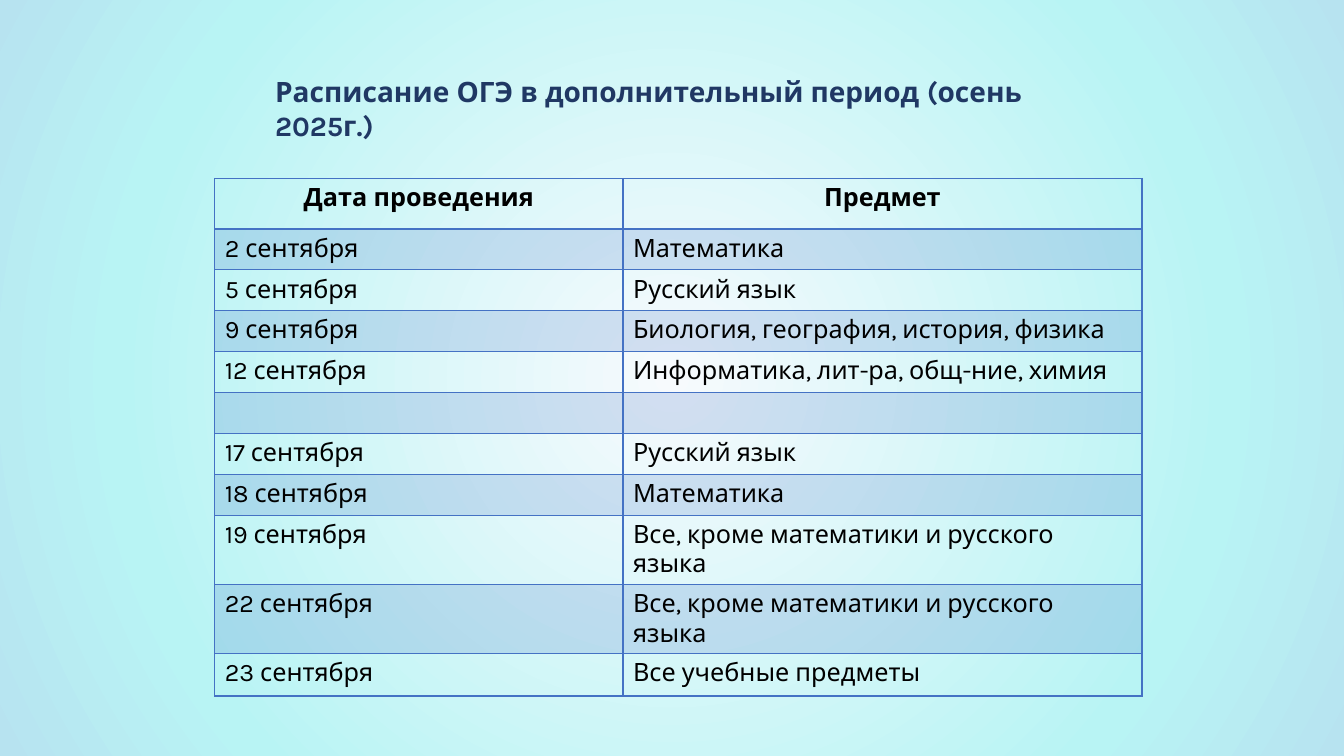
from lxml import etree
from pptx import Presentation
from pptx import util as u
from pptx.dml.color import RGBColor
from pptx.enum import text
from pptx.oxml import parse_xml
from pptx.oxml.ns import nsdecls, qn

NAVY = RGBColor(0x20, 0x38, 0x64)
BLUE = RGBColor(0x44, 0x72, 0xC4)
BLACK = RGBColor(0, 0, 0)
BACKGROUND_STOPS = [
    (0, RGBColor(0xF7, 0xFA, 0xFD)),
    (72, RGBColor(0xB8, 0xF4, 0xF4)),
    (100, RGBColor(0xB7, 0xE3, 0xF0)),
]

TITLE = "Расписание ОГЭ в дополнительный период (осень 2025г.)"
HEADER = ("Дата проведения", "Предмет")
EXAMS = [
    ("2 сентября", "Математика"),
    ("5 сентября", "Русский язык"),
    ("9 сентября", "Биология, география, история, физика"),
    ("12 сентября", "Информатика, лит-ра, общ-ние, химия"),
    ("", ""),
    ("17 сентября", "Русский язык"),
    ("18 сентября", "Математика"),
    ("19 сентября", "Все, кроме математики и русского языка"),
    ("22 сентября", "Все, кроме математики и русского языка"),
    ("23 сентября", "Все учебные предметы"),
]
COLUMN_WIDTHS = [10.29, 13.08]
ROW_HEIGHTS = [1.27] + [1.03] * 8 + [1.17, 1.07]


class ScheduleSlide:
    font_name = "Karla"

    def __init__(self, presentation):
        self.slide = presentation.slides.add_slide(presentation.slide_layouts[5])

    def background(self, stops):
        stop_xml = "".join(
            f'<a:gs pos="{position * 1000}"><a:srgbClr val="{color}"/></a:gs>'
            for position, color in stops
        )
        self.slide.element.cSld.insert(0, parse_xml(
            f'<p:bg {nsdecls("p", "a")}><p:bgPr><a:gradFill rotWithShape="1">'
            f'<a:gsLst>{stop_xml}</a:gsLst><a:path path="circle">'
            '<a:fillToRect l="50000" t="50000" r="50000" b="50000"/></a:path>'
            '</a:gradFill><a:effectLst/></p:bgPr></p:bg>'
        ))

    def format_paragraph(self, paragraph, size, color, bold, alignment):
        paragraph.alignment = alignment
        font = paragraph.font
        font.name, font.size, font.bold = self.font_name, u.Pt(size), bold
        font.color.rgb = color

    def title(self, words, left, top, width, height):
        shape = self.slide.shapes.title
        shape.left, shape.top = u.Cm(left), u.Cm(top)
        shape.width, shape.height = u.Cm(width), u.Cm(height)
        frame = shape.text_frame
        frame.text = words
        frame.word_wrap = True
        frame.auto_size = text.MSO_AUTO_SIZE.NONE
        frame.vertical_anchor = text.MSO_ANCHOR.TOP
        self.format_paragraph(frame.paragraphs[0], 20, NAVY, True, text.PP_ALIGN.LEFT)

    def border(self, cell, bottom_width):
        properties = cell._tc.get_or_add_tcPr()
        widths = {"lnL": 1, "lnR": 1, "lnT": 1, "lnB": bottom_width}
        for index, (side, width) in enumerate(widths.items()):
            properties.insert(index, parse_xml(
                f'<a:{side} {nsdecls("a")} w="{u.Pt(width)}"><a:solidFill>'
                f'<a:srgbClr val="{BLUE}"/></a:solidFill></a:{side}>'
            ))

    def shade(self, cell, opacity):
        cell.fill.solid()
        cell.fill.fore_color.rgb = BLUE
        color = cell._tc.tcPr.find(".//" + qn("a:srgbClr"))
        etree.SubElement(color, qn("a:alpha")).set("val", str(opacity * 1000))

    def table(self, rows, left, top, column_widths, row_heights):
        frame = self.slide.shapes.add_table(
            len(rows), len(column_widths), u.Cm(left), u.Cm(top),
            u.Cm(sum(column_widths)), u.Cm(sum(row_heights)),
        )
        table = frame.table
        table.first_row = table.horz_banding = False
        for column, width in zip(table.columns, column_widths):
            column.width = u.Cm(width)
        for index, (row, height, values) in enumerate(zip(table.rows, row_heights, rows)):
            row.height = u.Cm(height)
            header = index == 0
            alignment = text.PP_ALIGN.CENTER if header else text.PP_ALIGN.LEFT
            for cell, value in zip(row.cells, values):
                cell.text = value
                self.format_paragraph(
                    cell.text_frame.paragraphs[0], 18, BLACK, header, alignment)
                if index % 2:
                    self.shade(cell, 20)
                else:
                    cell.fill.background()
                self.border(cell, 2 if header else 1)


def main():
    presentation = Presentation()
    presentation.slide_width, presentation.slide_height = u.Cm(33.87), u.Cm(19.05)
    schedule = ScheduleSlide(presentation)
    schedule.background(BACKGROUND_STOPS)
    schedule.title(TITLE, 6.68, 1.75, 20.8, 1.12)
    schedule.table([HEADER] + EXAMS, 5.41, 4.5, COLUMN_WIDTHS, ROW_HEIGHTS)
    presentation.save("out.pptx")


if __name__ == "__main__":
    main()
